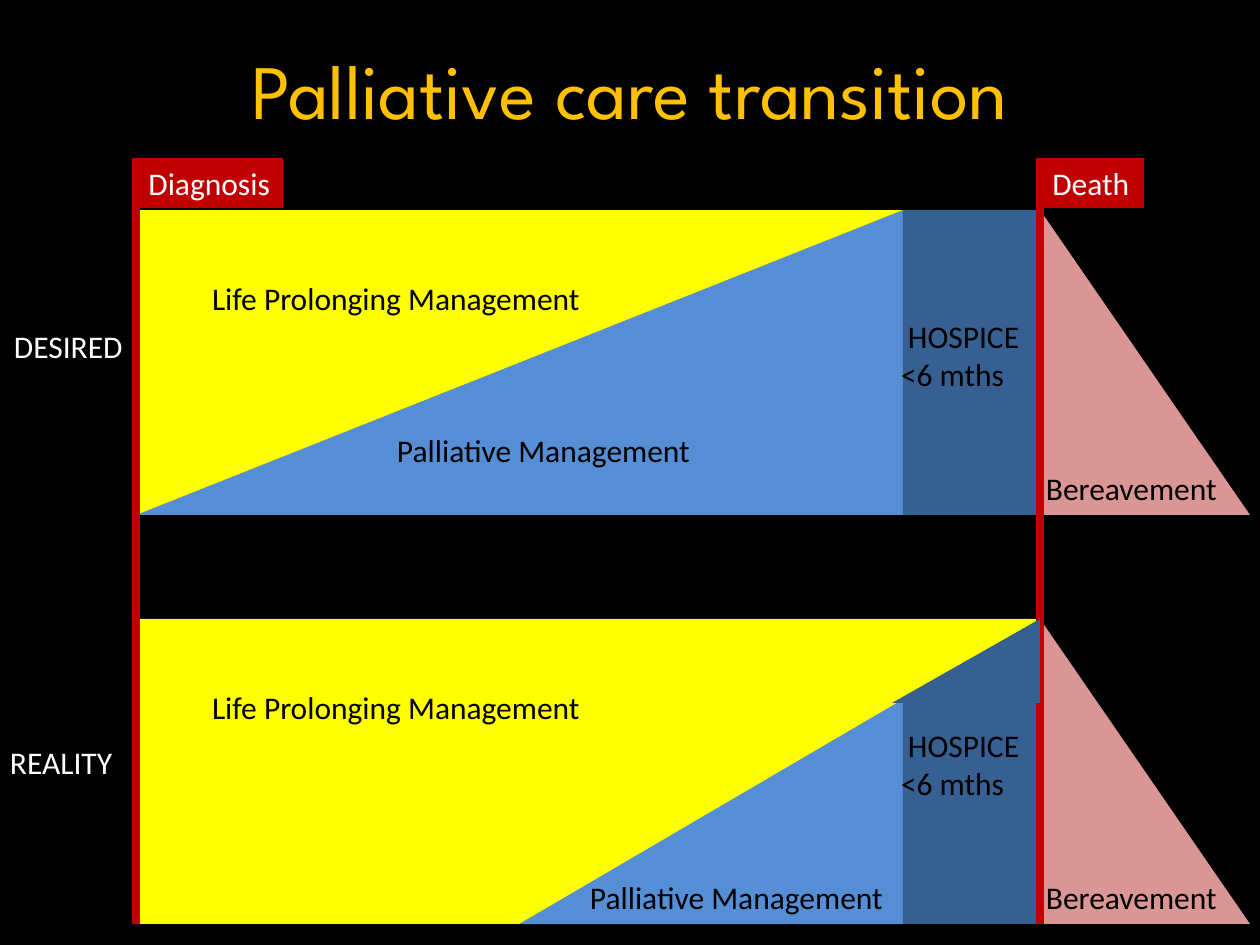
from dataclasses import dataclass

from lxml import etree
from pptx import Presentation
from pptx import util as u
from pptx.dml.color import RGBColor
from pptx.enum import shapes, text

PX = 914400 // 126
LEFT, HOSP, DEATH, END = 136, 903, 1040, 1250
TALL, STEP = 305, 38
RECT = shapes.MSO_SHAPE.RECTANGLE
TRI = shapes.MSO_SHAPE.ISOSCELES_TRIANGLE


@dataclass(frozen=True)
class Theme:
    back: str = "000000"
    title: str = "FFC000"
    dark: str = "000000"
    light: str = "FFFFFF"
    life: str = "FFFF00"
    care: str = "558ED5"
    hospice: str = "376092"
    grief: str = "D99694"
    mark: str = "C00000"
    head: str = "League Spartan"
    body: str = "Calibri"
    big: int = 44
    small: int = 18
    line: int = 5


T = Theme()


def px(*vals):
    return [u.Emu(v * PX) for v in vals]


def paint(fill, color):
    fill.solid()
    fill.fore_color.rgb = RGBColor.from_string(color)


def write(frame, words, face, size, color):
    run = frame.paragraphs[0].add_run()
    run.text = words
    run.font.name = face
    run.font.size = u.Pt(size)
    run.font.color.rgb = RGBColor.from_string(color)


def block(slide, kind, box, color):
    item = slide.shapes.add_shape(kind, *px(*box))
    item.shadow.inherit = False
    paint(item.fill, color)
    item.line.fill.background()
    return item


def wedge(slide, box, color, apex, turn=0):
    item = block(slide, TRI, box, color)
    item.adjustments[0] = apex
    item.rotation = turn


def label(slide, left, top, words, color=T.dark):
    width = 15 * len(words) + 10
    frame = slide.shapes.add_textbox(*px(left, top, width, 38)).text_frame
    frame.margin_left = frame.margin_right = 0
    frame.margin_top = frame.margin_bottom = 0
    frame.word_wrap = False
    write(frame, words, T.body, T.small, color)


def tag(slide, left, width, words):
    item = block(slide, RECT, (left, 158, width, 50), T.mark)
    frame = item.text_frame
    frame.word_wrap = True
    frame.vertical_anchor = text.MSO_ANCHOR.TOP
    frame.paragraphs[0].alignment = text.PP_ALIGN.LEFT
    write(frame, words, T.body, T.small, T.light)


def rule(slide, left):
    line = slide.shapes.add_connector(
        shapes.MSO_CONNECTOR.STRAIGHT, *px(left, 158, left, 924))
    line.line.width = u.Pt(T.line)
    paint(line.line.fill, T.mark)
    etree.SubElement(
        line._element.spPr,
        "{http://schemas.openxmlformats.org/drawingml/2006/main}effectLst")


def title(slide, words):
    item = slide.shapes.title
    item.left, item.top, item.width, item.height = px(63, 10, 1134, 158)
    frame = item.text_frame
    frame.vertical_anchor = text.MSO_ANCHOR.MIDDLE
    frame.paragraphs[0].alignment = text.PP_ALIGN.CENTER
    write(frame, words, T.head, T.big, T.title)


def stage(slide, top, start, care, hosp, stop):
    low = top + TALL
    wedge(slide, (start, care, HOSP - start, low - care), T.care, 1)
    block(slide, RECT, (HOSP, hosp, DEATH - HOSP, low - hosp), T.hospice)
    wedge(slide, (start, top, stop - start, TALL), T.life, 1, 180)
    wedge(slide, (DEATH, top, END - DEATH, TALL), T.grief, 0)


def names(slide, top, care, grief):
    rows = [
        (212, 0, "Life Prolonging Management"),
        (908, 1, "HOSPICE"),
        (901, 2, "<6 mths"),
        (*care, "Palliative Management"),
        (1046, grief, "Bereavement"),
    ]
    for left, row, words in rows:
        label(slide, left, top + 69 + row * STEP, words)


def main():
    deck = Presentation()
    deck.slide_width, deck.slide_height = px(1260, 945)
    slide = deck.slides.add_slide(deck.slide_layouts[5])
    paint(slide.background.fill, T.back)
    title(slide, "Palliative care transition")

    want, real, mid = 210, 619, 519
    block(slide, RECT, (LEFT, real, mid - LEFT, TALL), T.life)
    stage(slide, want, LEFT, want, want, HOSP)
    stage(slide, real, mid, 693, 703, DEATH)
    tag(slide, LEFT, 147, "Diagnosis")
    tag(slide, DEATH, 104, "Death")
    rule(slide, LEFT)
    rule(slide, DEATH)
    wedge(slide, (892, real, DEATH - 892, 84), T.hospice, 1)

    names(slide, want, (397, 4), 5)
    names(slide, real, (590, 5), 5)
    label(slide, 14, 327, "DESIRED", T.light)
    label(slide, 10, 743, "REALITY", T.light)
    deck.save("out.pptx")


if __name__ == "__main__":
    main()
